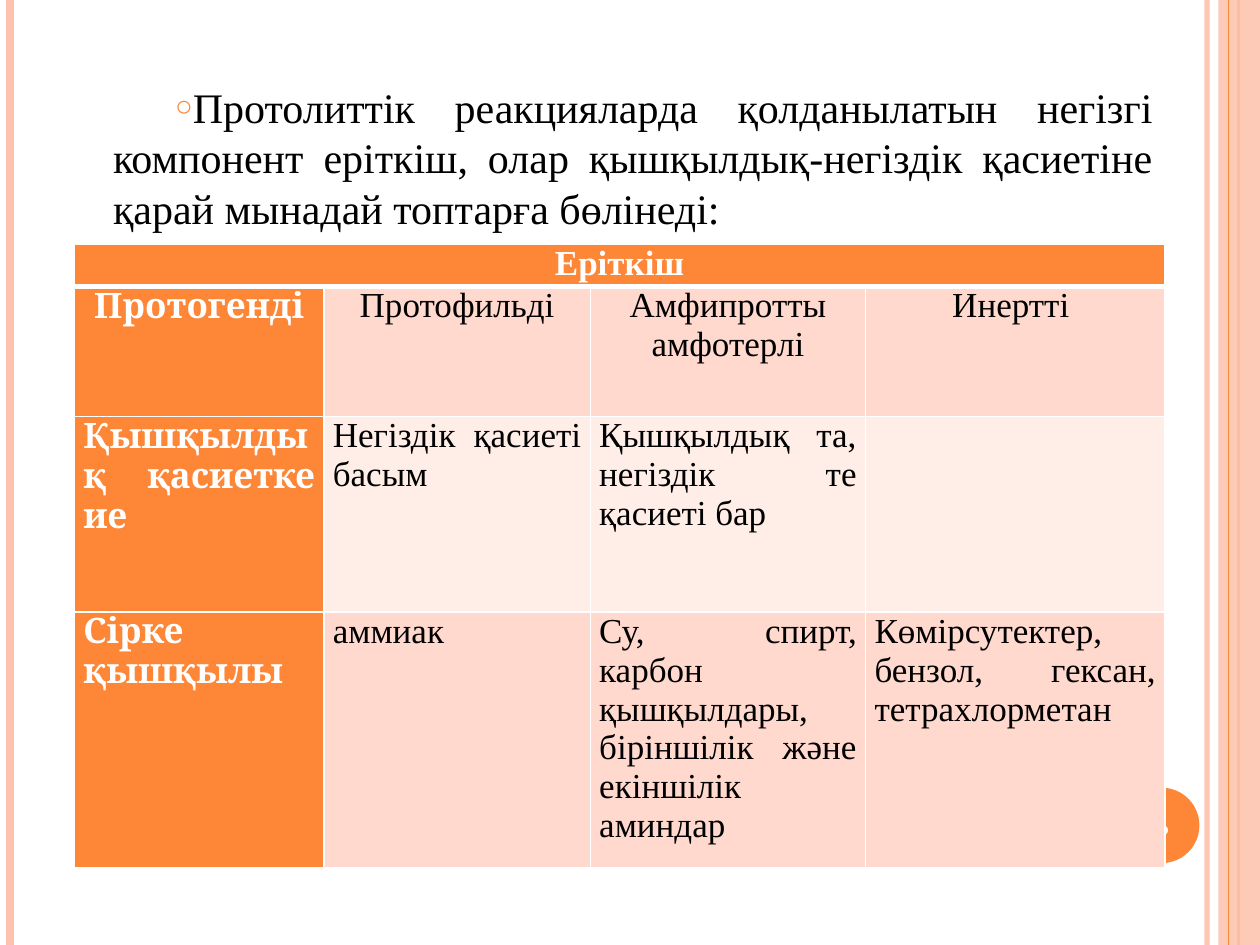
from dataclasses import dataclass

from lxml import etree
from pptx import Presentation
from pptx import util as u
from pptx.dml.color import RGBColor
from pptx.enum import shapes, text
from pptx.oxml.ns import qn

Cm, Pt = u.Cm, u.Pt
ALIGN = text.PP_ALIGN


@dataclass(frozen=True)
class Theme:
    accent: str = "FE8637"
    pale: str = "FEC3AE"
    band_dark: str = "FFD9CE"
    band_light: str = "FFEDE8"
    white: str = "FFFFFF"
    black: str = "000000"
    body_font: str = "Times New Roman"
    label_font: str = "Cambria"
    body_size: int = 24
    table_size: int = 20
    number_size: int = 14
    empty_size: int = 12


THEME = Theme()
SLIDE_HEIGHT = 19.05

# x, colour, width in points, opacity in percent
RULES = [
    (24.33, THEME.pale, 3, 93),
    (0.2, THEME.pale, 4.5, 100),
    (24.97, THEME.accent, 1.5, 100),
]
INNER_RULE = (24.77, THEME.accent, 0.75, 100)

INTRO = (
    "Протолиттік реакцияларда қолданылатын негізгі компонент еріткіш, "
    "олар қышқылдық-негіздік қасиетіне қарай мынадай топтарға бөлінеді:"
)
COLUMN_WIDTHS = [5.03, 5.37, 5.55, 6.03]
ROW_HEIGHTS = [0.74, 2.62, 3.94, 5.16]
SOLVENTS = [
    ["Еріткіш", "", "", ""],
    ["Протогенді", "Протофильді", "Амфипротты\nамфотерлі", "Инертті "],
    ["Қышқылдық қасиетке ие", "Негіздік қасиеті басым",
     "Қышқылдық та, негіздік те қасиеті бар", ""],
    ["Сірке қышқылы", "аммиак",
     "Су, спирт, карбон қышқылдары, біріншілік және екіншілік аминдар",
     "Көмірсутектер, бензол, гексан, тетрахлорметан"],
]


def set_all(target, values):
    for name, value in values.items():
        setattr(target, name, value)


def child(parent, tag, **attributes):
    return etree.SubElement(parent, qn(tag), attributes)


def set_opacity(properties, percent):
    if percent < 100:
        colour = next(properties.iter(qn("a:srgbClr")))
        child(colour, "a:alpha", val=str(percent * 1000))


def style_font(font, name, size, colour, bold=False):
    set_all(font, {"name": name, "size": Pt(size), "bold": bold})
    font.color.rgb = RGBColor.from_string(colour)


def add_rule(slide, x, colour, width, opacity):
    """Draw a vertical line over the whole slide height."""
    rule = slide.shapes.add_connector(
        shapes.MSO_CONNECTOR.STRAIGHT, Cm(x), 0, Cm(x), Cm(SLIDE_HEIGHT))
    rule.line.color.rgb = RGBColor.from_string(colour)
    rule.line.width = Pt(width)
    properties = rule._element.spPr
    set_opacity(properties, opacity)
    child(properties, "a:effectLst")


def add_filled_shape(slide, kind, box, colour, opacity=100):
    shape = slide.shapes.add_shape(kind, *map(Cm, box))
    shape.shadow.inherit = False
    shape.fill.solid()
    shape.fill.fore_color.rgb = RGBColor.from_string(colour)
    shape.line.fill.background()
    set_opacity(shape._element.spPr, opacity)


def add_text(slide, box, words, alignment, anchor, font_values):
    frame = slide.shapes.add_textbox(*map(Cm, box)).text_frame
    set_all(frame, {"word_wrap": True, "vertical_anchor": anchor})
    paragraph = frame.paragraphs[0]
    paragraph.alignment = alignment
    run = paragraph.add_run()
    run.text = words
    style_font(run.font, **font_values)
    return paragraph


def add_intro(slide):
    intro = add_text(
        slide, (1.27, 1.52, 22.22, 16.46), INTRO, ALIGN.JUSTIFY,
        text.MSO_ANCHOR.TOP,
        {"name": THEME.body_font, "size": THEME.body_size,
         "colour": THEME.black})
    intro.space_before = Pt(6)
    properties = intro._p.get_or_add_pPr()
    properties.set("marL", str(Cm(0.76)))
    properties.set("indent", str(Cm(1.25)))
    bullet_colour = child(properties, "a:buClr")
    child(bullet_colour, "a:srgbClr", val=THEME.accent)
    child(properties, "a:buSzPct", val="70000")
    child(properties, "a:buFont", typeface=THEME.body_font)
    child(properties, "a:buChar", char="○")


def set_borders(cell, widths):
    """Give the cell white borders; widths maps side tags to points."""
    properties = cell._tc.get_or_add_tcPr()
    for position, (side, width) in enumerate(widths.items()):
        border = etree.Element(qn(f"a:{side}"), w=str(Pt(width)))
        fill = child(border, "a:solidFill")
        child(fill, "a:srgbClr", val=THEME.white)
        properties.insert(position, border)


def fill_cell(cell, words, row, column):
    is_label = row == 0 or column == 0
    band = THEME.band_light if row == 2 else THEME.band_dark
    cell.fill.solid()
    cell.fill.fore_color.rgb = RGBColor.from_string(
        THEME.accent if is_label else band)
    set_all(cell, {"margin_left": Cm(0.18), "margin_right": Cm(0.18),
                   "margin_top": 0, "margin_bottom": 0})
    set_borders(cell, {"lnL": 1, "lnR": 1, "lnT": 3 if row == 1 else 1,
                       "lnB": 3 if row == 0 else 1})
    if not words:
        # Small empty lines keep the header row from growing.
        child(cell.text_frame.paragraphs[0]._p, "a:endParaRPr",
              sz=str(THEME.empty_size * 100))
        return
    cell.text = words
    for paragraph in cell.text_frame.paragraphs:
        paragraph.alignment = ALIGN.CENTER if row < 2 else ALIGN.JUSTIFY
        for run in paragraph.runs:
            style_font(
                run.font,
                THEME.label_font if row and is_label else THEME.body_font,
                THEME.table_size,
                THEME.white if is_label else THEME.black, is_label)


def add_solvent_table(slide):
    table = slide.shapes.add_table(
        len(ROW_HEIGHTS), len(COLUMN_WIDTHS), Cm(1.5), Cm(4.93),
        Cm(sum(COLUMN_WIDTHS)), Cm(sum(ROW_HEIGHTS))).table
    for column, width in zip(table.columns, COLUMN_WIDTHS):
        column.width = Cm(width)
    for row, height in zip(table.rows, ROW_HEIGHTS):
        row.height = Cm(height)
    table.cell(0, 0).merge(table.cell(0, len(COLUMN_WIDTHS) - 1))
    for row, entries in enumerate(SOLVENTS):
        for column, words in enumerate(entries):
            fill_cell(table.cell(row, column), words, row, column)


def main():
    deck = Presentation()
    set_all(deck, {"slide_width": Cm(25.4), "slide_height": Cm(SLIDE_HEIGHT)})
    slide = deck.slides.add_slide(deck.slide_layouts[6])

    for rule in RULES:
        add_rule(slide, *rule)
    add_filled_shape(slide, shapes.MSO_SHAPE.RECTANGLE,
                     (24.56, 0, 0.84, SLIDE_HEIGHT), THEME.pale, 87)
    add_rule(slide, *INNER_RULE)
    add_filled_shape(slide, shapes.MSO_SHAPE.OVAL,
                     (22.66, 15.88, 1.52, 1.52), THEME.accent)
    add_intro(slide)
    add_text(slide, (22.58, 15.93, 1.7, 1.45), "6", ALIGN.CENTER,
             text.MSO_ANCHOR.MIDDLE,
             {"name": THEME.label_font, "size": THEME.number_size,
              "colour": THEME.white, "bold": True})
    add_solvent_table(slide)
    deck.save("out.pptx")


if __name__ == "__main__":
    main()
